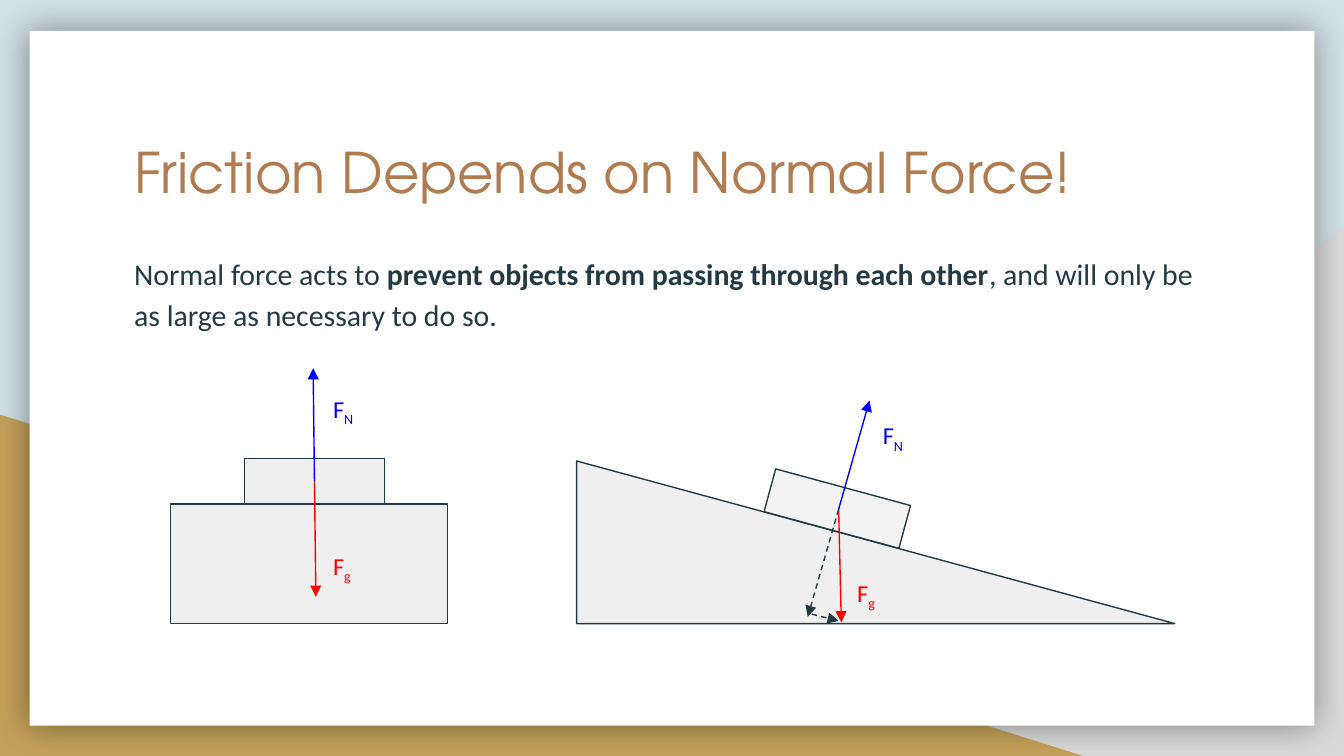
from lxml import etree
from pptx import Presentation
from pptx.dml.color import RGBColor
from pptx.enum.dml import MSO_LINE
from pptx.enum.shapes import MSO_CONNECTOR, MSO_SHAPE
from pptx.enum.text import MSO_ANCHOR
from pptx.oxml import parse_xml
from pptx.oxml.ns import nsdecls, qn
from pptx.util import Inches, Pt

RECTANGLE = MSO_SHAPE.RECTANGLE
TRIANGLE = MSO_SHAPE.RIGHT_TRIANGLE
STRAIGHT = MSO_CONNECTOR.STRAIGHT
DASH = MSO_LINE.DASH
TOP = MSO_ANCHOR.TOP

DARK = "233A44"
BLUE = "0000FF"
RED = "FF0000"
GRAY = "EFEFEF"
BODY_FONT = "Calibri"
TITLE_FONT = "TeX Gyre Adventor"


def color(value):
    return RGBColor.from_string(value)


def add_box(slide, kind, left, top, width, height, fill, outline=None):
    shape = slide.shapes.add_shape(
        kind, Inches(left), Inches(top), Inches(width), Inches(height))
    shape.shadow.inherit = False
    shape.fill.solid()
    shape.fill.fore_color.rgb = color(fill)
    if outline:
        shape.line.color.rgb = color(outline)
        shape.line.width = Pt(0.75)
    else:
        shape.line.fill.background()
    return shape


def flip_horizontally(shape):
    shape._element.spPr.find(qn("a:xfrm")).set("flipH", "1")


def add_arrow(slide, start, end, line_color, dash=None):
    arrow = slide.shapes.add_connector(
        STRAIGHT, *(Inches(value) for value in (*start, *end)))
    arrow.line.color.rgb = color(line_color)
    arrow.line.width = Pt(0.75)
    if dash:
        arrow.line.dash_style = dash
    properties = arrow._element.spPr
    line = properties.find(qn("a:ln"))
    etree.SubElement(line, qn("a:tailEnd"), type="triangle")
    etree.SubElement(properties, qn("a:effectLst"))


def add_text_box(slide, left, top, width, height):
    box = slide.shapes.add_textbox(
        Inches(left), Inches(top), Inches(width), Inches(height))
    frame = box.text_frame
    frame.word_wrap = True
    frame.vertical_anchor = TOP
    frame.margin_left = frame.margin_right = Inches(0.1)
    frame.margin_top = frame.margin_bottom = Inches(0.1)
    return frame.paragraphs[0]


def add_run(paragraph, text, size, text_color, font=BODY_FONT, bold=False):
    run = paragraph.add_run()
    run.text = text
    run.font.size = Pt(size)
    run.font.name = font
    run.font.bold = bold
    run.font.color.rgb = color(text_color)
    return run


def add_force_label(slide, left, top, subscript, text_color):
    paragraph = add_text_box(slide, left, top, 0.49, 0.39)
    add_run(paragraph, "F", 13, text_color)
    run = add_run(paragraph, subscript, 13, text_color)
    run._r.get_or_add_rPr().set("baseline", "-25000")


def add_backdrop(slide, width, height):
    slide.background.fill.solid()
    slide.background.fill.fore_color.rgb = color("D0E0E3")
    corner = add_box(slide, TRIANGLE, width - 6.08, height - 3.93, 6.08, 3.93, "D9D9D9")
    flip_horizontally(corner)
    add_box(slide, TRIANGLE, 0, height - 2.54, 8.06, 2.54, "C4A15A")
    card = add_box(slide, RECTANGLE, 0.22, 0.23, width - 0.44, 5.17, "FFFFFF")
    properties = card._element.spPr
    properties.remove(properties.find(qn("a:effectLst")))
    properties.append(parse_xml(
        f'<a:effectLst {nsdecls("a")}>'
        f'<a:outerShdw blurRad="{Pt(18)}" dist="0" dir="0" algn="ctr" rotWithShape="0">'
        '<a:srgbClr val="000000"><a:alpha val="40000"/></a:srgbClr>'
        '</a:outerShdw></a:effectLst>'))


def add_heading(slide, left, top, width):
    title = add_text_box(slide, left, top, width, 1.04)
    add_run(title, "Friction Depends on Normal Force!", 30, "AF7B51", TITLE_FONT)
    body = add_text_box(slide, left, top + 0.84, width, 0.77)
    body.line_spacing = 1.15
    body.space_after = Pt(12)
    add_run(body, "Normal force acts to ", 16, DARK)
    add_run(body, "prevent objects from passing through each other", 16, DARK, bold=True)
    add_run(body, ", and will only be as large as necessary to do so.", 16, DARK)


def add_flat_diagram(slide, left, top):
    add_box(slide, RECTANGLE, left + 0.55, top + 0.67, 1.04, 0.34, GRAY, DARK)
    add_box(slide, RECTANGLE, left, top + 1.01, 2.06, 0.89, GRAY, DARK)
    center = (left + 1.07, top + 0.84)
    add_arrow(slide, center, (left + 1.06, top), BLUE)
    add_arrow(slide, center, (left + 1.08, top + 1.7), RED)
    add_force_label(slide, left + 1.11, top + 0.09, "N", BLUE)
    add_force_label(slide, left + 1.11, top + 1.26, "g", RED)


def add_incline_diagram(slide, left, top):
    add_box(slide, TRIANGLE, left, top + 0.45, 4.45, 1.21, GRAY, DARK)
    block = add_box(slide, RECTANGLE, left + 1.42, top + 0.64, 1.04, 0.33, "F3F3F3", DARK)
    block.rotation = 15.2
    center = (left + 1.95, top + 0.81)
    add_arrow(slide, center, (left + 2.18, top), BLUE)
    add_arrow(slide, center, (left + 1.97, top + 1.65), RED)
    add_force_label(slide, left + 2.18, top + 0.05, "N", BLUE)
    add_force_label(slide, left + 1.99, top + 1.22, "g", RED)
    add_arrow(slide, center, (left + 1.72, top + 1.61), DARK, DASH)
    add_arrow(slide, (left + 1.75, top + 1.59), (left + 1.95, top + 1.64), DARK, DASH)


def main():
    width = 10
    height = width * 9 / 16
    presentation = Presentation()
    presentation.slide_width = Inches(width)
    presentation.slide_height = Inches(height)
    slide = presentation.slides.add_slide(presentation.slide_layouts[6])
    add_backdrop(slide, width, height)
    add_heading(slide, 0.9, 0.92, 8.21)
    add_incline_diagram(slide, 4.29, 2.98)
    add_flat_diagram(slide, 1.27, 2.74)
    presentation.save("out.pptx")


if __name__ == "__main__":
    main()
